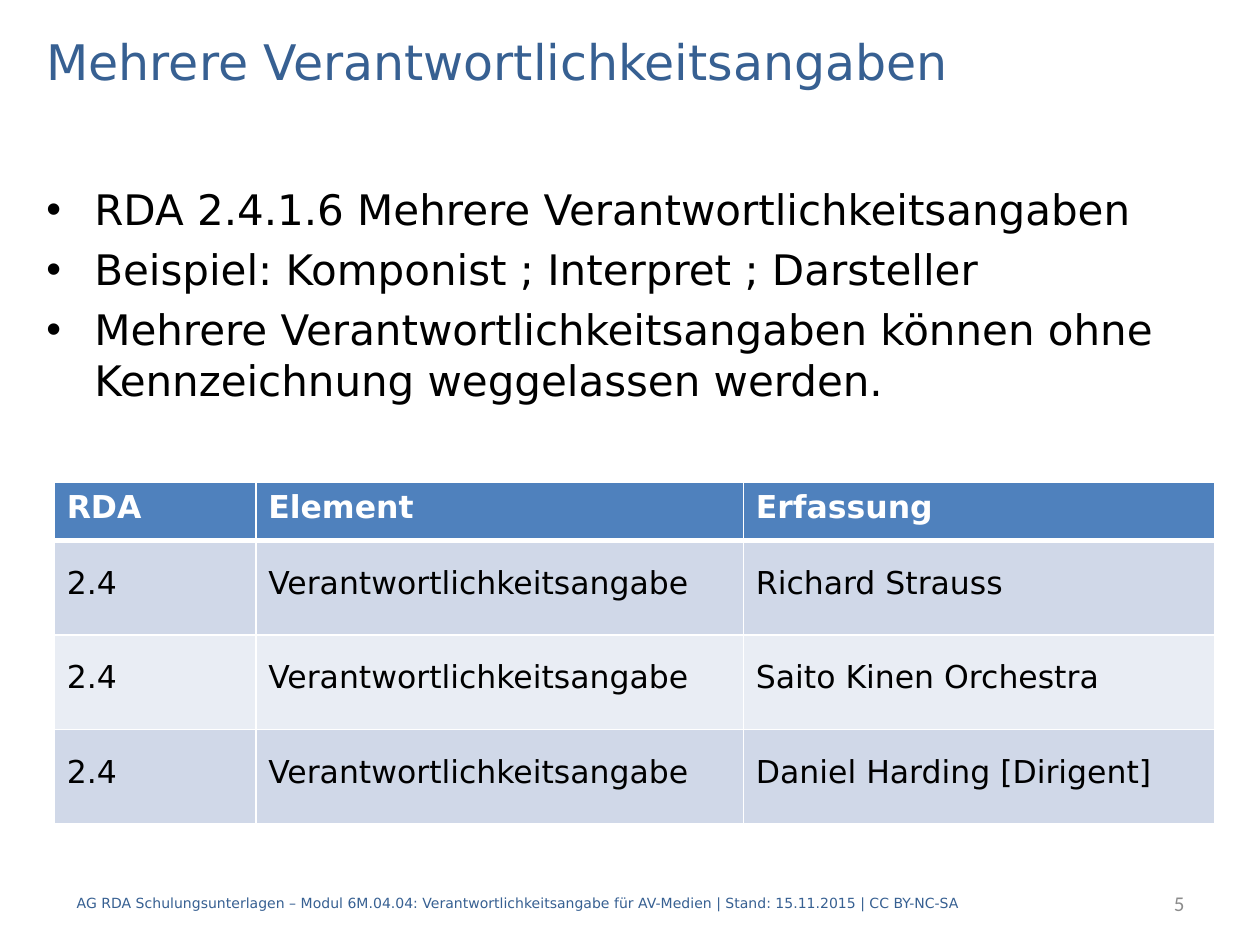
from lxml import etree
from pptx import Presentation
from pptx.dml.color import RGBColor
from pptx.enum.text import MSO_ANCHOR, PP_ALIGN
from pptx.oxml.ns import qn
from pptx.util import Inches, Pt

MIDDLE, TOP = MSO_ANCHOR.MIDDLE, MSO_ANCHOR.TOP
LEFT, RIGHT = PP_ALIGN.LEFT, PP_ALIGN.RIGHT
FONT = "DejaVu Sans"
COLORS = {"blue": "376092", "black": "000000", "white": "FFFFFF",
          "grey": "8C8C8C", "head": "4F81BD", "dark": "D0D8E8", "light": "E9EDF4"}


def style(par, size, color, name=FONT, bold=False, align=LEFT):
    par.alignment = align
    for run in par.runs:
        run.font.size = Pt(size)
        run.font.name = name
        run.font.bold = bold
        run.font.color.rgb = RGBColor.from_string(COLORS[color])


def border(cell, side, width):
    """Draw a white line, width in points, on one side (L, R, T or B)."""
    line = etree.SubElement(cell._tc.get_or_add_tcPr(), qn(f"a:ln{side}"), w=str(Pt(width)))
    fill = etree.SubElement(line, qn("a:solidFill"))
    etree.SubElement(fill, qn("a:srgbClr"), val=COLORS["white"])


prs = Presentation()
prs.slide_width, prs.slide_height = Inches(10), Inches(7.5)
slide = prs.slides.add_slide(prs.slide_layouts[5])

# Title
title = slide.shapes.title
title.left, title.top = Inches(0.27), Inches(0.2)
title.width, title.height = Inches(9.45), Inches(0.56)
frame = title.text_frame
frame.text = "Mehrere Verantwortlichkeitsangaben"
frame.vertical_anchor = MIDDLE
style(frame.paragraphs[0], 28, "blue")

# Bullet list
body = slide.shapes.add_textbox(Inches(0.27), Inches(0.91), Inches(9.45), Inches(2.36))
frame = body.text_frame
frame.word_wrap = True
frame.margin_top = Inches(0.55)
frame.text = "\n".join([
    "RDA 2.4.1.6 Mehrere Verantwortlichkeitsangaben",
    "Beispiel: Komponist ; Interpret ; Darsteller",
    "Mehrere Verantwortlichkeitsangaben können ohne Kennzeichnung weggelassen werden.",
])
for i, par in enumerate(frame.paragraphs):
    style(par, 24, "black")
    par.space_before = Pt(5.5 if i else 0)
    props = par._p.get_or_add_pPr()
    props.set("marL", str(Inches(0.38)))
    props.set("indent", str(-Inches(0.38)))
    etree.SubElement(props, qn("a:buFont"), typeface="Arial")
    etree.SubElement(props, qn("a:buChar"), char="•")

# Footer and page number
footer = ("AG RDA Schulungsunterlagen – Modul 6M.04.04: Verantwortlichkeitsangabe "
          "für AV-Medien | Stand: 15.11.2015 | CC BY-NC-SA")
for left, width, text, size, color, name, align in [
    (0.51, 8.35, footer, 8, "blue", FONT, LEFT),
    (7.91, 1.59, "5", 12, "grey", "Calibri", RIGHT),
]:
    box = slide.shapes.add_textbox(Inches(left), Inches(6.97), Inches(width), Inches(0.4))
    frame = box.text_frame
    frame.word_wrap = True
    frame.vertical_anchor = MIDDLE
    frame.text = text
    style(frame.paragraphs[0], size, color, name, align=align)

# Table
rows = [("RDA", "Element", "Erfassung")] + [
    ("2.4", "Verantwortlichkeitsangabe", entry)
    for entry in ("Richard Strauss", "Saito Kinen Orchestra", "Daniel Harding [Dirigent]")
]
table = slide.shapes.add_table(4, 3, Inches(0.43), Inches(3.83),
                               Inches(9.21), Inches(2.7)).table
for col, width in zip(table.columns, (1.6, 3.87, 3.74)):
    col.width = Inches(width)
for r, row in enumerate(rows):
    head = r == 0
    table.rows[r].height = Inches(0.46 if head else 0.75)
    shade = "head" if head else "dark" if r % 2 else "light"
    for c, text in enumerate(row):
        cell = table.cell(r, c)
        cell.text = text
        cell.vertical_anchor = TOP if head else MIDDLE
        par = cell.text_frame.paragraphs[0]
        style(par, 18, "white" if head else "black", bold=head)
        if not head:
            par.line_spacing = Pt(16)
            par.space_before = par.space_after = Pt(6)
        for side in "LRTB":
            thick = (head and side == "B") or (r == 1 and side == "T")
            border(cell, side, 3 if thick else 1)
        cell.fill.solid()
        cell.fill.fore_color.rgb = RGBColor.from_string(COLORS[shade])

prs.save("out.pptx")
